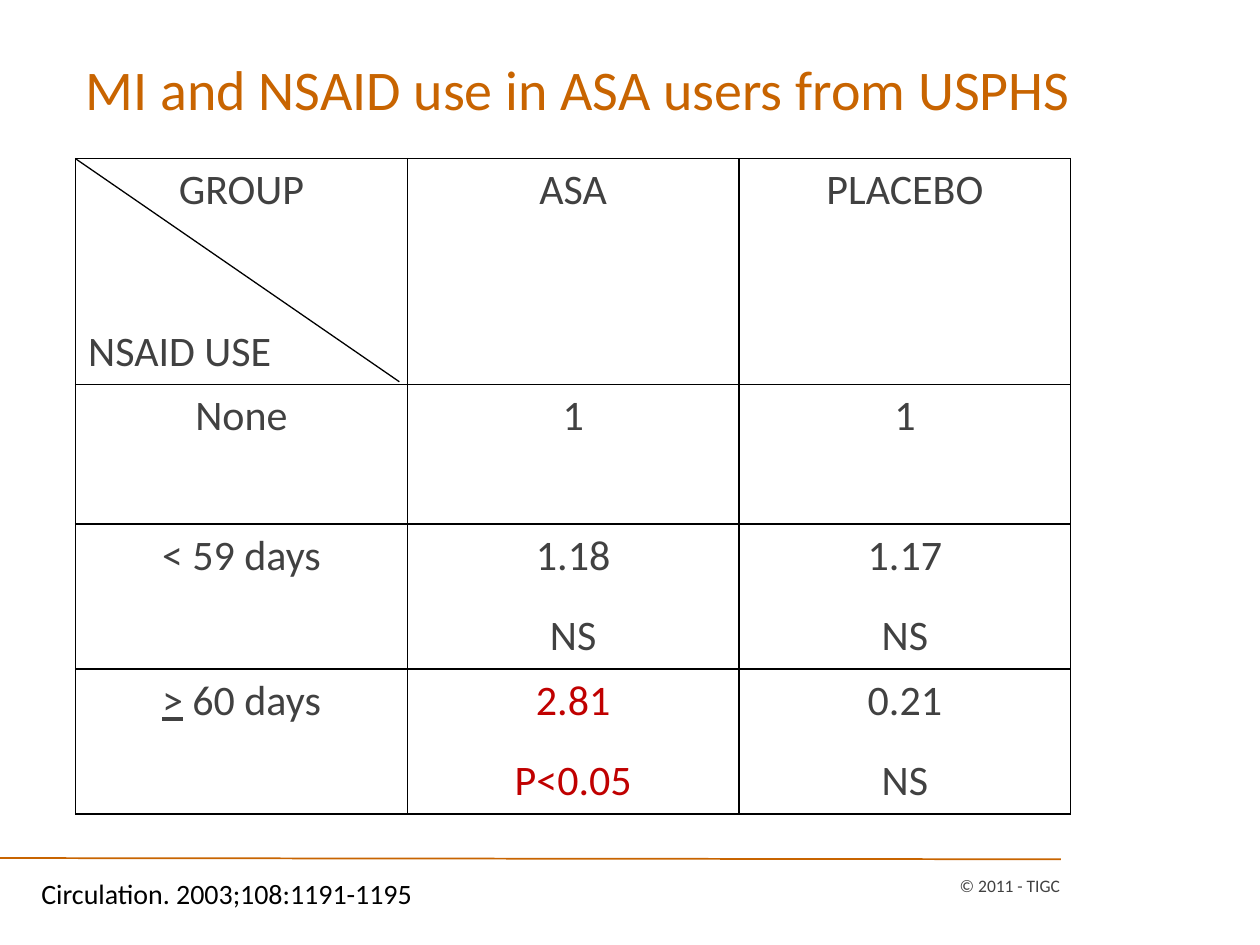
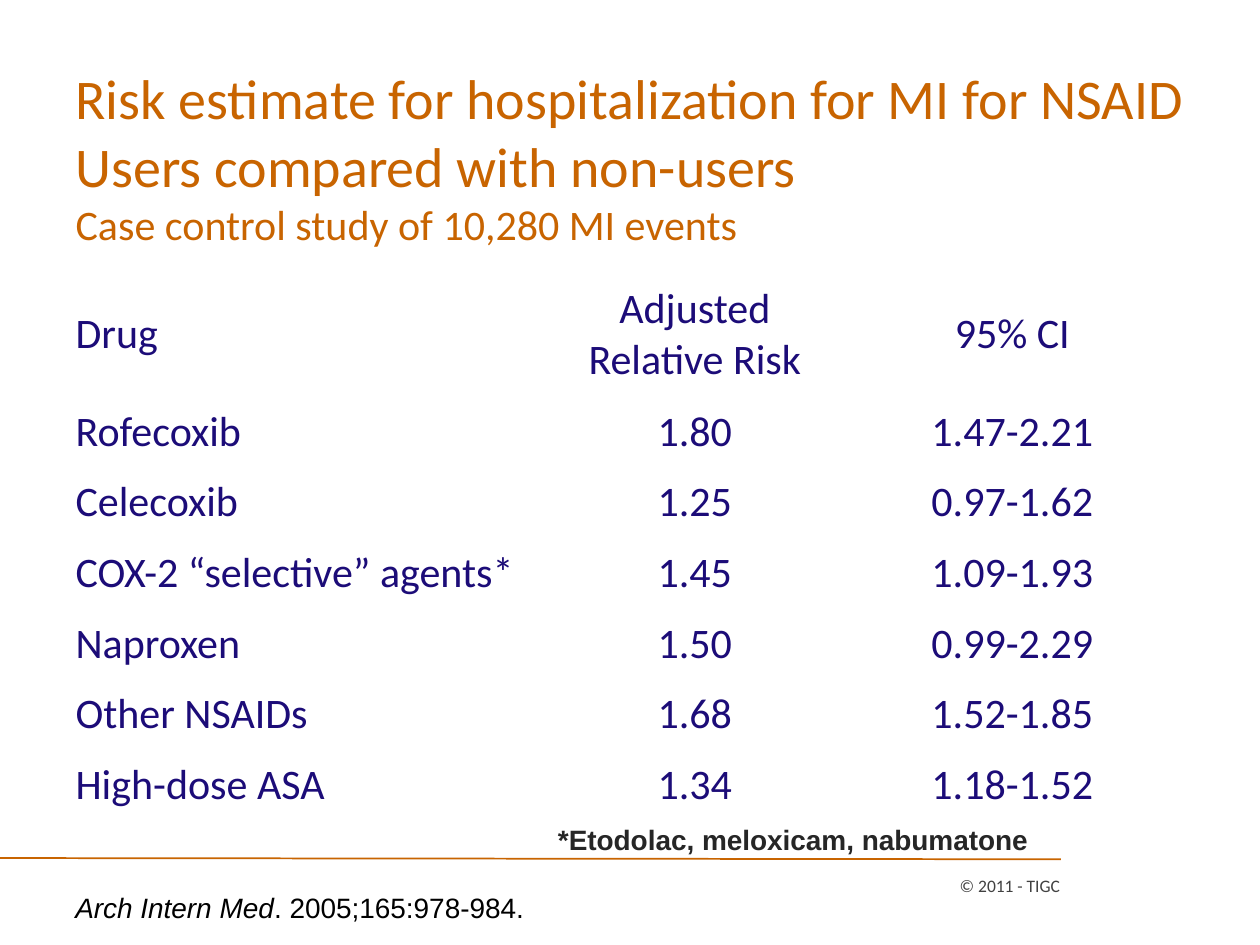
"""Builds two slides on heart attack risk among NSAID users."""
from dataclasses import dataclass

import pptx
import pptx.dml.color
import pptx.enum.shapes
import pptx.enum.text
import pptx.oxml
import pptx.oxml.ns
import pptx.util

ALIGN = pptx.enum.text.PP_ALIGN
ANCHOR = pptx.enum.text.MSO_ANCHOR
WIDTH, HEIGHT = pptx.util.Inches(10), pptx.util.Inches(7.5)


@dataclass(frozen=True)
class Theme:
    accent: str = "C86400"
    body: str = "414141"
    alert: str = "C00000"
    navy: str = "1C0C78"
    note: str = "262626"
    black: str = "000000"
    font: str = "Calibri"
    note_font: str = "Arial"
    title_size: int = 32
    body_size: int = 24
    note_size: int = 16
    footer_size: int = 10


T = Theme()


def across(share):
    return int(WIDTH * share / 100)


def down(share):
    return int(HEIGHT * share / 100)


def box(x, y, w, h):
    return across(x), down(y), across(w), down(h)


def rgb(color):
    return pptx.dml.color.RGBColor.from_string(color)


def write(tf, paragraphs, size, color, font=T.font, align=ALIGN.LEFT, bold=False):
    """Fill a frame; a paragraph is a string or a tuple of run texts."""
    for i, parts in enumerate(paragraphs):
        p = tf.add_paragraph() if i else tf.paragraphs[0]
        p.alignment = align
        if isinstance(parts, str):
            p.text = parts
        else:
            for part in parts:
                p.add_run().text = part
        for r in p.runs:
            r.font.size = pptx.util.Pt(size)
            r.font.name = font
            r.font.bold = bold
            r.font.color.rgb = rgb(color)


def add_text(s, place, parts, size, color, anchor=ANCHOR.TOP, wrap=True, **style):
    tf = s.shapes.add_textbox(*box(*place)).text_frame
    tf.word_wrap = wrap
    tf.vertical_anchor = anchor
    write(tf, [parts], size, color, **style)
    return tf


def add_line(s, start, end, color, width):
    line = s.shapes.add_connector(
        pptx.enum.shapes.MSO_CONNECTOR.STRAIGHT,
        across(start[0]), down(start[1]), across(end[0]), down(end[1]))
    line.line.color.rgb = rgb(color)
    line.line.width = pptx.util.Pt(width)
    line.element.spPr.append(pptx.oxml.parse_xml(
        f"<a:effectLst {pptx.oxml.ns.nsdecls('a')}/>"))


def add_slide(prs, title_place, title):
    """Add a slide with its title, footer rule and copyright line."""
    s = prs.slides.add_slide(prs.slide_layouts[5])
    shape = s.shapes.title
    shape.left, shape.top, shape.width, shape.height = box(*title_place)
    tf = shape.text_frame
    tf.word_wrap = True
    tf.auto_size = pptx.enum.text.MSO_AUTO_SIZE.NONE
    tf.vertical_anchor = ANCHOR.MIDDLE
    write(tf, title, T.title_size, T.accent)
    add_line(s, (84.2, 90.93), (0, 90.8), T.accent, 1)
    add_text(s, (53.4, 91.07, 31.7, 5.33), "© 2011 - TIGC", T.footer_size, T.body,
             anchor=ANCHOR.MIDDLE, align=ALIGN.RIGHT)
    return s


def add_grid(s, left, top, cols, rows):
    """Add an unfilled table with the given column and row shares."""
    table = s.shapes.add_table(
        len(rows), len(cols), *box(left, top, sum(cols), sum(rows))).table
    table.first_row = table.horz_banding = False
    for col, share in zip(table.columns, cols):
        col.width = across(share)
    for row, share in zip(table.rows, rows):
        row.height = down(share)
    for cell in table.iter_cells():
        cell.fill.background()
    return table


def add_borders(cell, color, width):
    tcPr = cell._tc.get_or_add_tcPr()
    for i, side in enumerate(("lnL", "lnR", "lnT", "lnB")):
        tcPr.insert(i, pptx.oxml.parse_xml(
            f"<a:{side} {pptx.oxml.ns.nsdecls('a')} w='{pptx.util.Pt(width)}'>"
            f"<a:solidFill><a:srgbClr val='{color}'/></a:solidFill></a:{side}>"))


def add_usphs_slide(prs):
    s = add_slide(prs, (5.8, 5.47, 88, 7.73),
                  ["MI and NSAID use in ASA users from USPHS"])
    rows = [
        [["GROUP", "NSAID USE"], ["ASA"], ["PLACEBO"]],
        [["None"], ["1"], ["1"]],
        [["< 59 days"], ["1.18", "NS"], ["1.17", "NS"]],
        [[(">", " 60 days")], ["2.81", "P<0.05"], ["0.21", "NS"]],
    ]
    table = add_grid(s, 6, 16.8, [26.33] * 3, [23.87, 14.8, 15.33, 15.33])
    for i, row in enumerate(rows):
        for j, lines in enumerate(row):
            cell = table.cell(i, j)
            color = T.alert if (i, j) == (3, 1) else T.body
            write(cell.text_frame, lines, T.body_size, color, align=ALIGN.CENTER)
            for p in cell.text_frame.paragraphs[1:]:
                p.space_before = pptx.util.Pt(16.8)
            add_borders(cell, T.black, 1)
    row_label = table.cell(0, 0).text_frame.paragraphs[1]
    row_label.alignment = ALIGN.LEFT
    row_label.space_before = pptx.util.Pt(63)
    table.cell(3, 0).text_frame.paragraphs[0].runs[0].font.underline = True
    add_line(s, (6, 16.8), (31.7, 40.4), T.black, 0.75)
    add_text(s, (2.1, 92.13, 31.8, 4.93), "Circulation. 2003;108:1191-1195",
             T.note_size, T.black, wrap=False, align=ALIGN.CENTER)


def add_risk_slide(prs):
    s = add_slide(prs, (5, 6.13, 95, 20.8), [
        "Risk estimate for hospitalization for MI for NSAID Users compared with non-users",
        "Case control study of 10,280 MI events"])
    subtitle = s.shapes.title.text_frame.paragraphs[1]
    subtitle.runs[0].font.size = pptx.util.Pt(T.body_size)
    rows = [
        ("Drug", "Adjusted Relative Risk", "95% CI"),
        ("Rofecoxib", "1.80", "1.47-2.21"),
        ("Celecoxib", "1.25", "0.97-1.62"),
        ("COX-2 “selective” agents*", "1.45", "1.09-1.93"),
        ("Naproxen", "1.50", "0.99-2.29"),
        ("Other NSAIDs", "1.68", "1.52-1.85"),
        ("High-dose ASA", "1.34", "1.18-1.52"),
    ]
    table = add_grid(s, 5, 28.8, [38.8, 22.7, 27.7], [13.2] + [7.47] * 6)
    for i, row in enumerate(rows):
        for j, text in enumerate(row):
            cell = table.cell(i, j)
            cell.vertical_anchor = ANCHOR.MIDDLE
            write(cell.text_frame, [text], T.body_size, T.navy,
                  align=ALIGN.CENTER if j else ALIGN.LEFT)
    add_text(s, (43.3, 86.27, 43.3, 4.93), "*Etodolac, meloxicam, nabumatone",
             T.note_size, T.note, anchor=ANCHOR.BOTTOM, font=T.note_font, bold=True)
    tf = add_text(s, (5, 93.47, 60, 4.93), ("Arch Intern Med", ". 2005;165:978-984."),
                  T.note_size, T.black, anchor=ANCHOR.BOTTOM, font=T.note_font)
    tf.paragraphs[0].runs[0].font.italic = True


def main():
    prs = pptx.Presentation()
    prs.slide_width, prs.slide_height = WIDTH, HEIGHT
    add_usphs_slide(prs)
    add_risk_slide(prs)
    prs.save("out.pptx")


if __name__ == "__main__":
    main()
